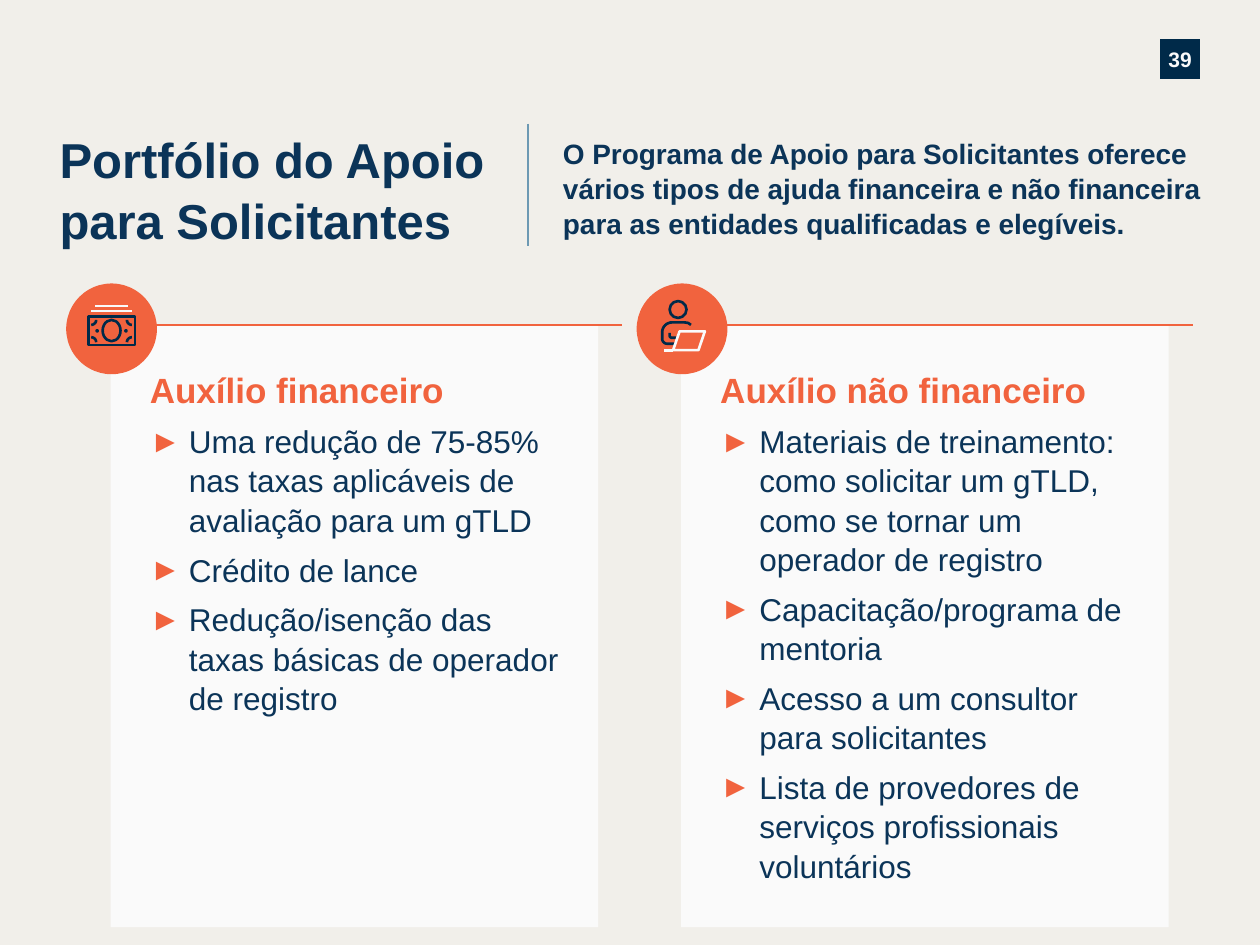
from math import cos, radians, sin

from lxml.etree import SubElement
from pptx import Presentation
from pptx.dml.color import RGBColor
from pptx.enum.shapes import MSO_CONNECTOR, MSO_SHAPE
from pptx.enum.text import MSO_ANCHOR, MSO_AUTO_SIZE, PP_ALIGN
from pptx.oxml.ns import qn
from pptx.util import Cm, Pt

CREAM = RGBColor(0xF1, 0xEF, 0xEA)
WHITE = RGBColor(0xFA, 0xFA, 0xFA)
NAVY = RGBColor(0x0B, 0x34, 0x58)
DARK = RGBColor(0x00, 0x2A, 0x49)
CORAL = RGBColor(0xF1, 0x63, 0x3E)
STEEL = RGBColor(0x6D, 0x99, 0xB3)

LEFT, PITCH, TOP = 2.23, 11.5, 6.55  # card grid in cm
DISC = 1.83

CARDS = [
    ("Auxílio financeiro", 0.61, [
        "Uma redução de 75-85% nas taxas aplicáveis de avaliação para um gTLD",
        "Crédito de lance",
        "Redução/isenção das taxas básicas de operador de registro",
    ]),
    ("Auxílio não financeiro", 0.89, [
        "Materiais de treinamento: como solicitar um gTLD, como se tornar um "
        "operador de registro",
        "Capacitação/programa de mentoria",
        "Acesso a um consultor para solicitantes",
        "Lista de provedores de serviços profissionais voluntários",
    ]),
]


def set_frame(frame, pads=(0, 0, 0, 0), anchor=MSO_ANCHOR.TOP):
    left, top, right, bottom = map(Cm, pads)
    form = {"margin_left": left, "margin_top": top, "margin_right": right,
            "margin_bottom": bottom, "word_wrap": True,
            "auto_size": MSO_AUTO_SIZE.NONE, "vertical_anchor": anchor}
    for name, value in form.items():
        setattr(frame, name, value)


def write(para, text, size, color, bold=True, align=PP_ALIGN.LEFT):
    para.alignment = align
    para.line_spacing = 1.04
    run = para.add_run()
    run.text = text
    form = {"name": "Arial", "size": Pt(size), "bold": bold}
    for name, value in form.items():
        setattr(run.font, name, value)
    run.font.color.rgb = color


def add_bullet(para):
    para.space_before = Pt(6)
    props = para._p.get_or_add_pPr()
    props.set("marL", str(Cm(0.79)))
    props.set("indent", str(-Cm(0.79)))
    tint = SubElement(props, qn("a:buClr"))
    SubElement(tint, qn("a:srgbClr")).set("val", str(CORAL))
    SubElement(props, qn("a:buFont")).set("typeface", "Arial")
    SubElement(props, qn("a:buChar")).set("char", "►")


def add_shape(slide, kind, x, y, w, h, fill=None, line=None):
    shape = slide.shapes.add_shape(kind, Cm(x), Cm(y), Cm(w), Cm(h))
    paint(shape, fill, line)
    return shape


def paint(shape, fill=None, line=None):
    shape.shadow.inherit = False
    if fill is None:
        shape.fill.background()
    else:
        shape.fill.solid()
        shape.fill.fore_color.rgb = fill
    if line is None:
        shape.line.fill.background()
    else:
        shape.line.color.rgb = line
        shape.line.width = Pt(1.5)


def add_line(slide, x1, y1, x2, y2, color, width=1.5):
    line = slide.shapes.add_connector(
        MSO_CONNECTOR.STRAIGHT, Cm(x1), Cm(y1), Cm(x2), Cm(y2))
    line.line.color.rgb = color
    line.line.width = Pt(width)
    SubElement(line._element.spPr, qn("a:effectLst"))


def trace(slide, x, y, points, color, close=False):
    """Draw an outline whose points are offsets from x, y."""
    dots = [(Cm(x + dx), Cm(y + dy)) for dx, dy in points]
    pen = slide.shapes.build_freeform(*dots[0])
    pen.add_line_segments(dots[1:], close=close)
    paint(pen.convert_to_shape(), line=color)


def arc(x, y, r, start, end, steps=8):
    turns = [radians(start + (end - start) * i / steps)
             for i in range(steps + 1)]
    return [(x + r * cos(t), y + r * sin(t)) for t in turns]


def draw_bill(slide, x, y):
    add_shape(slide, MSO_SHAPE.RECTANGLE, x - 0.47, y - 0.25, 0.94, 0.58,
              line=DARK)
    add_shape(slide, MSO_SHAPE.OVAL, x - 0.18, y - 0.18, 0.36, 0.43, line=DARK)
    for dx in (-0.29, 0.29):
        add_shape(slide, MSO_SHAPE.OVAL, x + dx - 0.01, y + 0.03, 0.02, 0.02,
                  line=DARK)
    # Rounded corners
    for dx, dy, start in ((-0.41, -0.18, 0), (0.41, -0.18, 90),
                          (0.41, 0.27, 180), (-0.41, 0.27, 270)):
        trace(slide, x, y, arc(dx, dy, 0.1, start, start + 90), DARK)
    # Stacked notes
    for half, dy in ((0.41, -0.36), (0.33, -0.46)):
        add_line(slide, x - half, y + dy, x + half, y + dy, WHITE)


def draw_person(slide, x, y):
    add_shape(slide, MSO_SHAPE.OVAL, x - 0.25, y - 0.56, 0.34, 0.34, line=DARK)
    body = [(0.18, -0.08), (0.12, -0.12), (0.05, -0.13),
            *arc(-0.2, 0.07, 0.2, 270, 180),
            *arc(-0.3, 0.2, 0.1, 180, 90), (-0.13, 0.3)]
    sleeve = [(-0.1, 0.18), (-0.22, 0.18), (-0.25, 0.15), (-0.25, 0.08)]
    for part in (body, sleeve):
        trace(slide, x, y, part, DARK)
    # Laptop
    add_line(slide, x - 0.36, y + 0.43, x - 0.18, y + 0.43, WHITE)
    trace(slide, x, y, [(-0.05, 0.05), (-0.18, 0.43), (0.33, 0.43),
                        (0.46, 0.05)], WHITE, close=True)


def add_card(slide, x, head, pad, items, icon):
    card = add_shape(slide, MSO_SHAPE.RECTANGLE, x, TOP, 9.83, 12.14, WHITE)
    frame = card.text_frame
    set_frame(frame, (0.79, 0.84, pad, 0.78))
    write(frame.paragraphs[0], head, 20, CORAL)
    for item in items:
        para = frame.add_paragraph()
        write(para, item, 18, NAVY, bold=False)
        add_bullet(para)
    add_line(slide, x, TOP, x + 10.31, TOP, CORAL, 1.25)
    # Icon disc
    mid, level = x + 0.02, TOP + 0.08
    add_shape(slide, MSO_SHAPE.OVAL, mid - DISC / 2, level - DISC / 2,
              DISC, DISC, CORAL)
    icon(slide, mid, level)


def add_header(slide):
    title = slide.shapes.title
    title.left, title.top, title.width, title.height = map(
        Cm, (1.2, 2.49, 9.83, 2.34))
    set_frame(title.text_frame, (0, 0.08, 0, 0))
    write(title.text_frame.paragraphs[0],
          "Portfólio do Apoio para Solicitantes", 28, NAVY)

    intro = slide.shapes.add_textbox(Cm(11.35), Cm(2.69), Cm(13.28), Cm(2.06))
    set_frame(intro.text_frame, (0, 0.04, 0, 0))
    write(intro.text_frame.paragraphs[0],
          "O Programa de Apoio para Solicitantes oferece vários tipos de ajuda "
          "financeira e não financeira para as entidades qualificadas e "
          "elegíveis.", 16, NAVY)
    add_line(slide, 10.64, 2.49, 10.64, 4.95, STEEL, 1.25)

    # Page number
    badge = add_shape(slide, MSO_SHAPE.RECTANGLE, 23.39, 0.79, 0.8, 0.8, DARK)
    set_frame(badge.text_frame, anchor=MSO_ANCHOR.MIDDLE)
    write(badge.text_frame.paragraphs[0], "39", 12, WHITE,
          align=PP_ALIGN.CENTER)


def main():
    deck = Presentation()
    deck.slide_width, deck.slide_height = Cm(25.4), Cm(19.05)
    slide = deck.slides.add_slide(deck.slide_layouts[5])
    slide.background.fill.solid()
    slide.background.fill.fore_color.rgb = CREAM
    add_header(slide)
    for i, (card, icon) in enumerate(zip(CARDS, (draw_bill, draw_person))):
        add_card(slide, LEFT + i * PITCH, *card, icon)
    deck.save("out.pptx")


if __name__ == "__main__":
    main()
